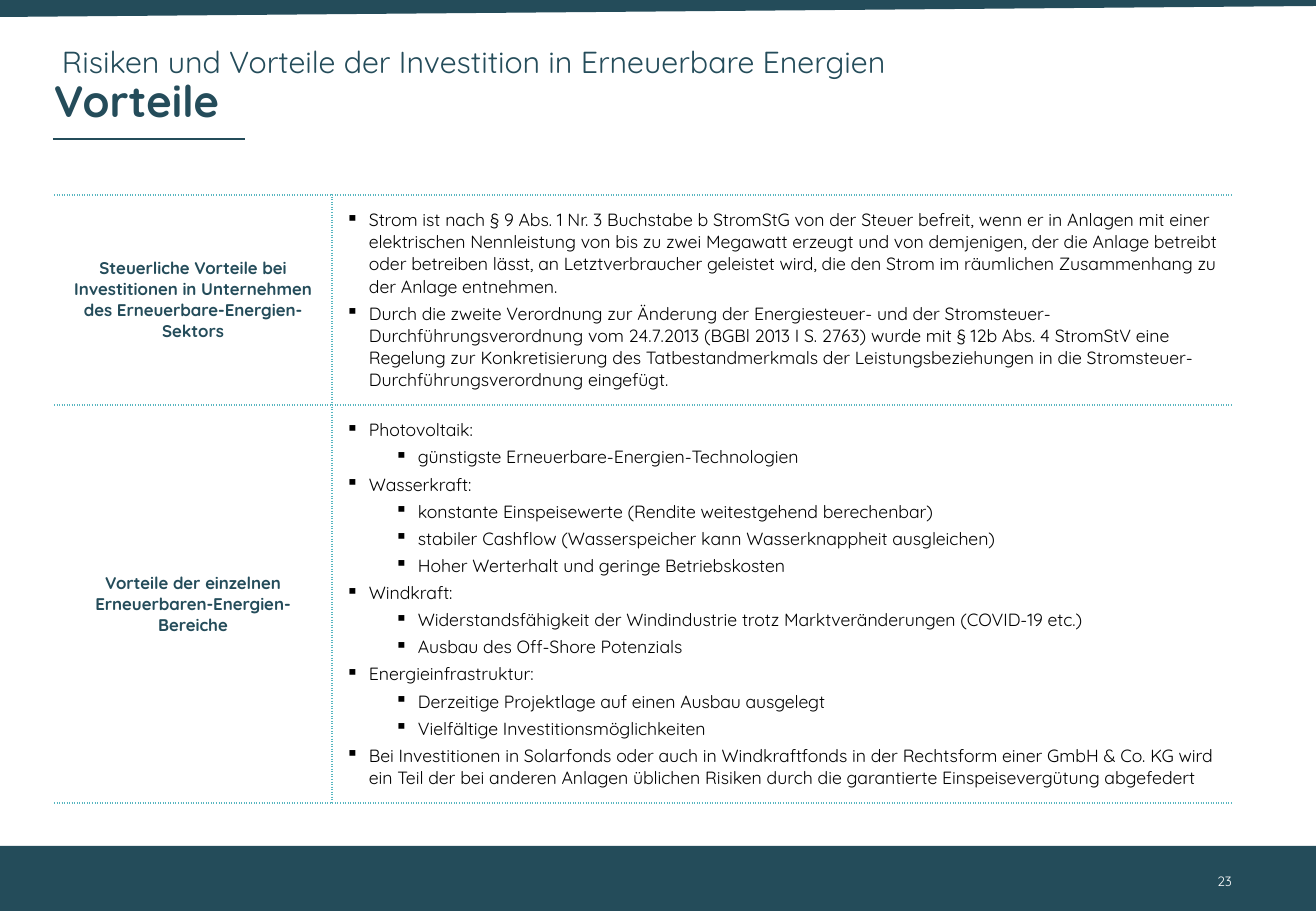
from dataclasses import dataclass

from lxml.etree import SubElement
from pptx import Presentation
from pptx.dml.color import RGBColor as Rgb
from pptx.enum.shapes import MSO_CONNECTOR as Conn, MSO_SHAPE as Shape
from pptx.enum.text import MSO_ANCHOR as Anchor, PP_ALIGN as Align
from pptx.oxml import parse_xml
from pptx.oxml.ns import nsdecls, qn
from pptx.util import Pt

PX = 7526  # EMU per px
WIDE, HIGH = 1316, 911
PLAIN = "{2D5ABB26-0587-4C30-8999-92F81FD0307C}"


@dataclass(frozen=True)
class Theme:
    font: str = "Quicksand"
    dark: str = "244C5A"
    teal: str = "58B6C0"
    black: str = "000000"
    white: str = "FFFFFF"
    kicker: float = 18
    title: float = 26
    label: float = 10
    body: float = 10.5
    page: float = 8


T = Theme()

ROWS = [
    (210, "Steuerliche Vorteile bei Investitionen in Unternehmen des Erneuerbare-Energien-Sektors", [
        (0, "Strom ist nach § 9 Abs. 1 Nr. 3 Buchstabe b StromStG von der Steuer befreit, wenn er in Anlagen "
            "mit einer elektrischen Nennleistung von bis zu zwei Megawatt erzeugt und von demjenigen, der die "
            "Anlage betreibt oder betreiben lässt, an Letztverbraucher geleistet wird, die den Strom im "
            "räumlichen Zusammenhang zu der Anlage entnehmen."),
        (0, "Durch die zweite Verordnung zur Änderung der Energiesteuer- und der "
            "Stromsteuer-Durchführungsverordnung vom 24.7.2013 (BGBl 2013 I S. 2763) wurde mit § 12b Abs. 4 "
            "StromStV eine Regelung zur Konkretisierung des Tatbestandmerkmals der Leistungsbeziehungen in die "
            "Stromsteuer-Durchführungsverordnung eingefügt."),
    ]),
    (398, "Vorteile der einzelnen Erneuerbaren-Energien-Bereiche", [
        (0, "Photovoltaik:"),
        (1, "günstigste Erneuerbare-Energien-Technologien"),
        (0, "Wasserkraft:"),
        (1, "konstante Einspeisewerte (Rendite weitestgehend berechenbar)"),
        (1, "stabiler Cashflow (Wasserspeicher kann Wasserknappheit ausgleichen)"),
        (1, "Hoher Werterhalt und geringe Betriebskosten"),
        (0, "Windkraft:"),
        (1, "Widerstandsfähigkeit der Windindustrie trotz Marktveränderungen (COVID-19 etc.)"),
        (1, "Ausbau des Off-Shore Potenzials"),
        (0, "Energieinfrastruktur:"),
        (1, "Derzeitige Projektlage auf einen Ausbau ausgelegt"),
        (1, "Vielfältige Investitionsmöglichkeiten"),
        (0, "Bei Investitionen in Solarfonds oder auch in Windkraftfonds in der Rechtsform einer GmbH & Co. KG "
            "wird ein Teil der bei anderen Anlagen üblichen Risiken durch die garantierte Einspeisevergütung "
            "abgefedert"),
    ]),
]


def emu(*sizes):
    return [size * PX for size in sizes]


def add_run(para, text, size, color, bold=False):
    run = para.add_run()
    run.text = text
    font = run.font
    font.name, font.size, font.bold = T.font, Pt(size), bold
    font.color.rgb = Rgb.from_string(color)


def paint(shape, color):
    shape.shadow.inherit = False
    shape.fill.solid()
    shape.fill.fore_color.rgb = Rgb.from_string(color)
    shape.line.fill.background()


def add_box(slide, box, inset):
    frame = slide.shapes.add_textbox(*emu(*box)).text_frame
    frame.word_wrap = True
    frame.margin_left = frame.margin_right = inset * PX
    frame.margin_top = frame.margin_bottom = 0
    return frame


def indent(para, left, hang=0):
    props = para._p.get_or_add_pPr()
    props.set("marL", str(left * PX))
    props.set("indent", str(-hang * PX))
    return props


def add_wedge(slide, box):
    left, top, width, height = box
    right = left + width
    form = slide.shapes.build_freeform(left, top, scale=PX)
    form.add_line_segments([(right, top), (right, top + 6), (left, top + height)])
    paint(form.convert_to_shape(), T.dark)


def add_head(slide, box):
    left, top, width, height = box
    frame = add_box(slide, (left + 1, top, width, height), 0)
    lines = [("Risiken und Vorteile der Investition in Erneuerbare Energien", T.kicker, False, 8),
             ("Vorteile", T.title, True, 0)]
    for i, (text, size, bold, left_in) in enumerate(lines):
        para = frame.add_paragraph() if i else frame.paragraphs[0]
        indent(para, left_in)
        para.line_spacing = 0.9
        add_run(para, text, size, T.dark, bold)
    rule = slide.shapes.add_connector(Conn.STRAIGHT, *emu(left, top + 92, left + 192, top + 92))
    rule.line.color.rgb = Rgb.from_string(T.dark)
    rule.line.width = Pt(1.5)
    SubElement(rule._element.spPr, qn("a:effectLst"))


def add_edges(cell, sides):
    props = cell._tc.get_or_add_tcPr()
    for i, side in enumerate(sides):
        props.insert(i, parse_xml(
            f'<a:ln{side} {nsdecls("a")} w="12700"><a:solidFill><a:srgbClr val="{T.teal}"/></a:solidFill>'
            f'<a:prstDash val="sysDot"/></a:ln{side}>'))


def fill_label(cell, text):
    para = cell.text_frame.paragraphs[0]
    para.alignment = Align.CENTER
    add_run(para, text, T.label, T.dark, True)


def fill_list(cell, items):
    frame = cell.text_frame
    for i, (level, text) in enumerate(items):
        para = frame.add_paragraph() if i else frame.paragraphs[0]
        para.level = level
        props = indent(para, 23 + 49 * level, 23)
        SubElement(props, qn("a:buChar")).set("char", "▪")
        if i:
            para.space_before = Pt(3)
        add_run(para, text, T.body, T.black)


def add_grid(slide, box):
    table = slide.shapes.add_table(len(ROWS), 2, *emu(*box)).table
    table.first_row = table.horz_banding = False
    table._tbl.tblPr.find(qn("a:tableStyleId")).text = PLAIN
    for column, width in zip(table.columns, (278, box[2] - 278)):
        column.width = width * PX
    for i, (height, label, items) in enumerate(ROWS):
        table.rows[i].height = height * PX
        name, facts = table.cell(i, 0), table.cell(i, 1)
        for cell, sides in ((name, "RTB"), (facts, "LTB")):
            cell.margin_left = cell.margin_right = 14 * PX
            cell.margin_top = cell.margin_bottom = 14 * PX
            cell.vertical_anchor = Anchor.MIDDLE
            cell.fill.background()
            add_edges(cell, sides)
        fill_label(name, label)
        fill_list(facts, items)


def add_foot(slide, box):
    left, top, width, height = box
    paint(slide.shapes.add_shape(Shape.RECTANGLE, *emu(*box)), T.dark)
    frame = add_box(slide, (left + width - 122, top + 11, 50, 49), 12)
    frame.vertical_anchor = Anchor.MIDDLE
    para = frame.paragraphs[0]
    para.alignment = Align.RIGHT
    add_run(para, "23", T.page, T.white)


def main():
    deck = Presentation()
    deck.slide_width, deck.slide_height = emu(WIDE, HIGH)
    slide = deck.slides.add_slide(deck.slide_layouts[6])
    add_wedge(slide, (0, 0, WIDE, 17))
    add_head(slide, (53, 47, 1190, 81))
    add_grid(slide, (54, 195, 1178, 608))
    add_foot(slide, (0, 846, WIDE, 65))
    deck.save("out.pptx")


if __name__ == "__main__":
    main()
